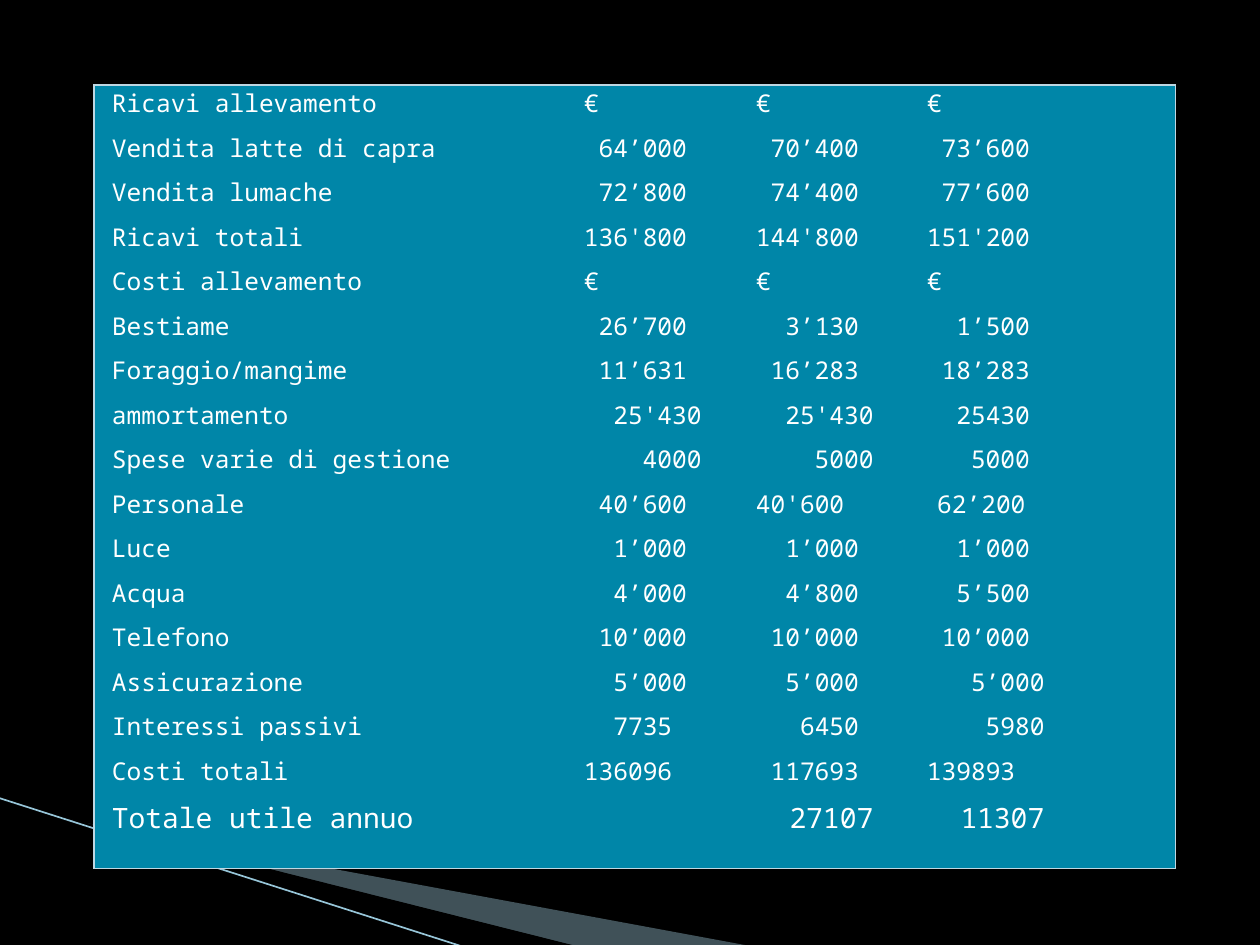
from dataclasses import dataclass

from lxml import etree
from pptx import Presentation
from pptx.dml.color import RGBColor
from pptx.enum.shapes import MSO_CONNECTOR
from pptx.oxml.ns import qn
from pptx.util import Emu, Pt

PX = 914400 / 126


@dataclass(frozen=True)
class Theme:
    background: str = "000000"
    swoosh: str = "A0CBDC"
    line: str = "97C5D8"
    table: str = "0086A8"
    border: str = "BED7E2"
    text: str = "FFFFFF"
    font: str = "Noto Sans Mono"
    body: int = 14
    total: int = 16


theme = Theme()


def px(value):
    return Emu(round(value * PX))


def add_border(cell, side):
    border = etree.SubElement(cell._tc.get_or_add_tcPr(), qn(f"a:ln{side}"), w=str(Pt(0.75)))
    fill = etree.SubElement(border, qn("a:solidFill"))
    etree.SubElement(fill, qn("a:srgbClr"), val=theme.border)


presentation = Presentation()
presentation.slide_width, presentation.slide_height = px(1260), px(945)
slide = presentation.slides.add_slide(presentation.slide_layouts[6])
slide.background.fill.solid()
slide.background.fill.fore_color.rgb = RGBColor.from_string(theme.background)

# Swoosh in the lower left corner: translucent blade, then black blade
blades = [
    (theme.swoosh, 40, [(69, 820), (750, 946), (575, 946), (69, 819)]),
    (theme.background, 100, [(67, 818), (576, 946), (469, 948), (68, 819)]),
]
for color, opacity, points in blades:
    builder = slide.shapes.build_freeform(*points[0], scale=PX)
    builder.add_line_segments(points[1:], close=True)
    shape = builder.convert_to_shape()
    shape.shadow.inherit = False
    shape.line.fill.background()
    shape.fill.solid()
    shape.fill.fore_color.rgb = RGBColor.from_string(color)
    if opacity < 100:
        color_element = shape._element.spPr.find(".//" + qn("a:srgbClr"))
        etree.SubElement(color_element, qn("a:alpha"), val=str(opacity * 1000))

connector = slide.shapes.add_connector(MSO_CONNECTOR.STRAIGHT, px(-1), px(798), px(467), px(948))
connector.line.color.rgb = RGBColor.from_string(theme.line)
connector.line.width = Pt(0.95)
etree.SubElement(connector._element.spPr, qn("a:effectLst"))

# Each row: label, yearly values, indent of each value in characters
rows = [
    ("Ricavi allevamento", ("€", "€", "€"), (0, 0, 0)),
    ("Vendita latte di capra", ("64’000", "70’400", "73’600"), (1, 1, 1)),
    ("Vendita lumache", ("72’800", "74’400", "77’600"), (1, 1, 1)),
    ("Ricavi totali", ("136'800", "144'800", "151'200"), (0, 0, 0)),
    ("Costi allevamento", ("€", "€", "€"), (0, 0, 0)),
    ("Bestiame", ("26’700", "3’130", "1’500"), (1, 2, 2)),
    ("Foraggio/mangime", ("11’631", "16’283", "18’283"), (1, 1, 1)),
    ("ammortamento", ("25'430", "25'430", "25430"), (2, 2, 2)),
    ("Spese varie di gestione", ("4000", "5000", "5000"), (4, 4, 3)),
    ("Personale", ("40’600", "40'600", "62’200"), (1, 0, 0.7)),
    ("Luce", ("1’000", "1’000", "1’000"), (2, 2, 2)),
    ("Acqua", ("4’000", "4’800", "5’500"), (2, 2, 2)),
    ("Telefono", ("10’000", "10’000", "10’000"), (1, 1, 1)),
    ("Assicurazione", ("5’000", "5’000", "5’000"), (2, 2, 3)),
    ("Interessi passivi", ("7735", "6450", "5980"), (2, 3, 4)),
    ("Costi totali", ("136096", "117693", "139893"), (0, 1, 0)),
    ("Totale utile annuo", ("", "27107", "11307"), (0, 2, 2)),
]
column_widths = [481, 172, 171, 258]
last_row, last_column = len(rows) - 1, len(column_widths) - 1

# Table without a built-in style
table_frame = slide.shapes.add_table(
    len(rows), len(column_widths), px(94), px(85), px(sum(column_widths)), px(784))
table = table_frame.table
table.first_row = table.horz_banding = False
style_id = table._tbl.tblPr.find(qn("a:tableStyleId"))
style_id.text = "{2D5ABB26-0587-4C30-8999-92F81FD0307C}"
for column, width in zip(table.columns, column_widths):
    column.width = px(width)

for row_index, (label, values, indents) in enumerate(rows):
    is_total = row_index == last_row
    table.rows[row_index].height = px(72 if is_total else 712 / last_row)
    size = theme.total if is_total else theme.body
    character_width = Pt(size * 0.6)
    margins = [px(9)] + [round(indent * character_width) for indent in indents]

    for column_index, text in enumerate((label, *values)):
        cell = table.cell(row_index, column_index)
        cell.margin_left = cell.margin_right = px(9)
        cell.margin_top = cell.margin_bottom = 0

        # Outer frame only
        edges = {
            "L": column_index == 0,
            "R": column_index == last_column,
            "T": row_index == 0,
            "B": is_total,
        }
        for side, on_edge in edges.items():
            if on_edge:
                add_border(cell, side)
        cell.fill.solid()
        cell.fill.fore_color.rgb = RGBColor.from_string(theme.table)

        paragraph = cell.text_frame.paragraphs[0]
        paragraph.text = text
        paragraph.line_spacing = 1.05
        properties = paragraph._p.get_or_add_pPr()
        properties.set("marL", str(margins[column_index]))
        properties.set("indent", "0")
        paragraph.font.name = theme.font
        paragraph.font.size = Pt(size)
        paragraph.font.color.rgb = RGBColor.from_string(theme.text)

presentation.save("out.pptx")
